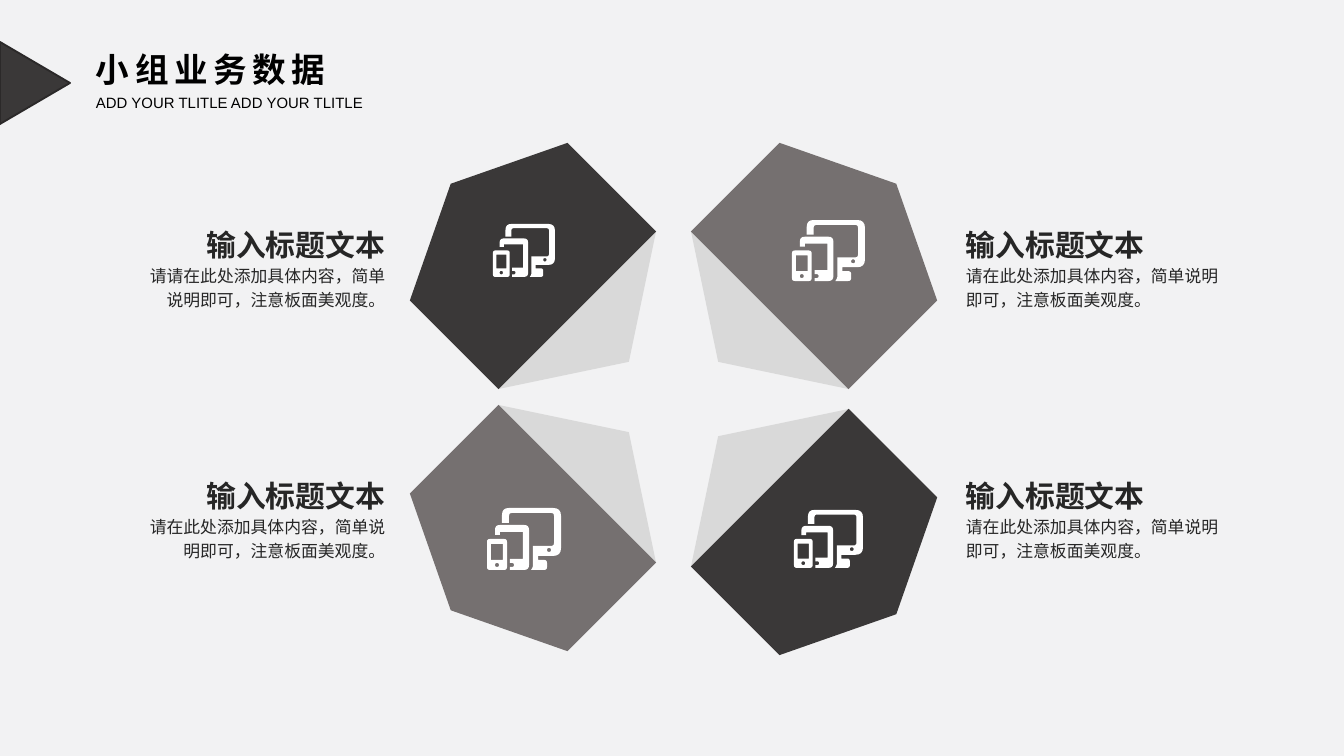
import pptx
import pptx.dml.color
import pptx.enum.shapes
import pptx.enum.text
import pptx.oxml
import pptx.oxml.ns
import pptx.util

PX = 914400 / 134.4
COLORS = {
    "background": "F2F2F3",
    "dark": "3A3838",
    "dark_edge": "2B2929",
    "gray": "757070",
    "fold": "D9D9D9",
    "icon": "FFFFFF",
    "title": "000000",
    "caption": "262626",
}
SHAPES = pptx.enum.shapes.MSO_SHAPE
ALIGN = pptx.enum.text.PP_ALIGN
ANCHOR = pptx.enum.text.MSO_ANCHOR
CJK = "Noto Sans CJK SC"
ICON_SIZE = (74, 62)
PHONE = [(0, 31, 3), (20, 31, 3), (20, 62, 3), (0, 62, 3)]
PHONE_SCREEN = [(4, 36, 0), (16, 36, 0), (16, 52, 0), (4, 52, 0)]
TABLET = [
    (8, 17, 5), (42, 17, 5), (42, 62, 5), (23, 62, 0), (23, 59, 0), (27, 59, 2),
    (27, 55, 2), (23, 55, 0), (23, 51, 0), (36, 51, 0), (36, 24, 0), (13, 24, 0),
    (13, 27, 0), (8, 27, 0),
]
MONITOR = [
    (15, 0, 7), (74, 0, 8), (74, 48, 8), (51, 48, 0), (51, 52, 0), (60, 52, 3),
    (60, 62, 3), (44, 62, 0), (46, 59, 2), (46, 38, 0), (67, 38, 3), (67, 5, 3),
    (22, 5, 3), (22, 15, 0), (15, 15, 0),
]


def px(length):
    """Turn px into EMU."""
    return pptx.util.Emu(round(length * PX))


def rgb(name):
    """Look up a named colour."""
    return pptx.dml.color.RGBColor.from_string(COLORS[name])


def paint(shape, fill, edge=None):
    """Give a shape a flat fill and an optional thin edge."""
    shape.shadow.inherit = False
    shape.fill.solid()
    shape.fill.fore_color.rgb = rgb(fill)
    if edge:
        shape.line.color.rgb = rgb(edge)
        shape.line.width = pptx.util.Pt(1)
    else:
        shape.line.fill.background()


def add_turned(shapes, preset, center, size, rotation, fill, edge=None):
    """Add a preset shape turned around its center."""
    (x, y), (width, height) = center, size
    shape = shapes.add_shape(
        preset, px(x - width / 2), px(y - height / 2), px(width), px(height))
    shape.rotation = rotation
    paint(shape, fill, edge)
    return shape


def add_text(shapes, box, text, size, color, font="Arial", bold=False, align=ALIGN.LEFT,
             anchor=ANCHOR.TOP, inset=(8, 0), line_spacing=None, tracking=0):
    """Add a one-paragraph text box."""
    frame = shapes.add_textbox(*map(px, box)).text_frame
    frame.word_wrap = True
    frame.vertical_anchor = anchor
    frame.margin_left = frame.margin_right = px(inset[0])
    frame.margin_top = frame.margin_bottom = px(inset[1])
    paragraph = frame.paragraphs[0]
    paragraph.text = text
    paragraph.alignment = align
    paragraph.line_spacing = line_spacing
    paragraph.font.size = pptx.util.Pt(size)
    paragraph.font.bold = bold
    paragraph.font.color.rgb = rgb(color)
    paragraph.font.name = font
    properties = paragraph._p.pPr.find(pptx.oxml.ns.qn("a:defRPr"))
    properties.append(pptx.oxml.parse_xml(
        f'<a:ea {pptx.oxml.ns.nsdecls("a")} typeface="{CJK}"/>'))
    if tracking:
        properties.set("spc", str(tracking * 100))


def add_header(shapes, box):
    """Place the edge arrow, the title and the subtitle."""
    left, top, width, height = box
    add_turned(shapes, SHAPES.ISOSCELES_TRIANGLE, (left + 35, top + height / 2),
               (height, 70), 90, "dark", "dark_edge")
    add_text(shapes, (left + 86, top - 4, width - 86, 67), "小组业务数据", 18, "title",
             font=CJK, bold=True, anchor=ANCHOR.MIDDLE, inset=(10, 5),
             line_spacing=0.9, tracking=3)
    add_text(shapes, (left + 86, top + 47, 312, 28), "ADD YOUR TLITLE ADD YOUR TLITLE",
             8, "title", inset=(10, 5))


def add_petal(shapes, box, tip, rotation, fill):
    """Place a pentagon pointing along tip, with its pale fold behind."""
    left, top, size = box
    x, y = left + size / 2, top + size / 2
    petal = shapes.add_group_shape().shapes
    add_turned(petal, SHAPES.ISOSCELES_TRIANGLE, (x - 69 * tip[0], y - 69 * tip[1]),
               (223, 73), rotation - 90, "fold")
    pentagon = add_turned(petal, SHAPES.PENTAGON, (x + 20 * tip[0], y + 20 * tip[1]),
                          (179, 223), rotation, fill)
    pentagon.adjustments[0] = 0.3


def rounded(corners):
    """Return the points of an outline whose (x, y, radius) corners are rounded."""
    points = []
    for index, (x, y, radius) in enumerate(corners):
        if not radius:
            points.append((x, y))
            continue
        ends = []
        for other_x, other_y, _ in (corners[index - 1], corners[(index + 1) % len(corners)]):
            share = radius / max(abs(other_x - x), abs(other_y - y))
            ends.append((x + (other_x - x) * share, y + (other_y - y) * share))
        for t in (0, 0.25, 0.5, 0.75, 1):
            points.append(tuple(
                (1 - t) ** 2 * start + 2 * t * (1 - t) * middle + t ** 2 * end
                for start, middle, end in zip(ends[0], (x, y), ends[1])))
    return points


def button(x, y):
    """Return the corners of a small round button."""
    return [(x + dx, y + dy, 2) for dx, dy in ((-2, -2), (2, -2), (2, 2), (-2, 2))]


def add_devices_icon(shapes, box):
    """Draw phone, tablet and monitor as one outline with holes."""
    left, top, width, height = box
    builder = None
    for corners in (PHONE, PHONE_SCREEN, button(10, 57), TABLET, MONITOR, button(62, 42)):
        points = [(px(left + x * width / ICON_SIZE[0]), px(top + y * height / ICON_SIZE[1]))
                  for x, y in rounded(corners)]
        if builder is None:
            builder = shapes.build_freeform(*points[0])
        else:
            builder.move_to(*points[0])
        builder.add_line_segments(points[1:], close=True)
    paint(builder.convert_to_shape(), "icon")


def add_caption(shapes, box, align, body):
    """Place a heading above its description."""
    left, top, width = box
    caption = shapes.add_group_shape().shapes
    add_text(caption, (left, top + 27, width, 64), body, 9, "caption", align=align,
             anchor=ANCHOR.MIDDLE, line_spacing=1.2)
    add_text(caption, (left, top, width, 27), "输入标题文本", 16, "caption",
             bold=True, align=align)


def main():
    """Build and save the slide."""
    deck = pptx.Presentation()
    deck.slide_width, deck.slide_height = px(1344), px(756)
    slide = deck.slides.add_slide(deck.slide_layouts[6])
    slide.background.fill.solid()
    slide.background.fill.fore_color.rgb = rgb("background")
    shapes = slide.shapes
    add_header(shapes, (0, 42, 478, 82))

    body = "请在此处添加具体内容，简单说明即可，注意板面美观度。"
    left_caption, right_caption = (128, 265, ALIGN.RIGHT), (958, 271, ALIGN.LEFT)
    quarters = [
        ((411, 144), (-1, -1), 225, "dark", (493, 224, 62, 53), left_caption, 227, "请" + body),
        ((690, 144), (1, -1), 315, "gray", (792, 220, 73, 61), right_caption, 227, body),
        ((411, 404), (-1, 1), 135, "gray", (487, 508, 74, 62), left_caption, 478, body),
        ((690, 408), (1, 1), 45, "dark", (794, 510, 69, 58), right_caption, 478, body),
    ]
    for corner, tip, rotation, fill, icon, (left, width, align), top, text in quarters:
        add_petal(shapes, (*corner, 246), tip, rotation, fill)
        add_devices_icon(shapes, icon)
        add_caption(shapes, (left, top, width), align, text)
    deck.save("out.pptx")


if __name__ == "__main__":
    main()
